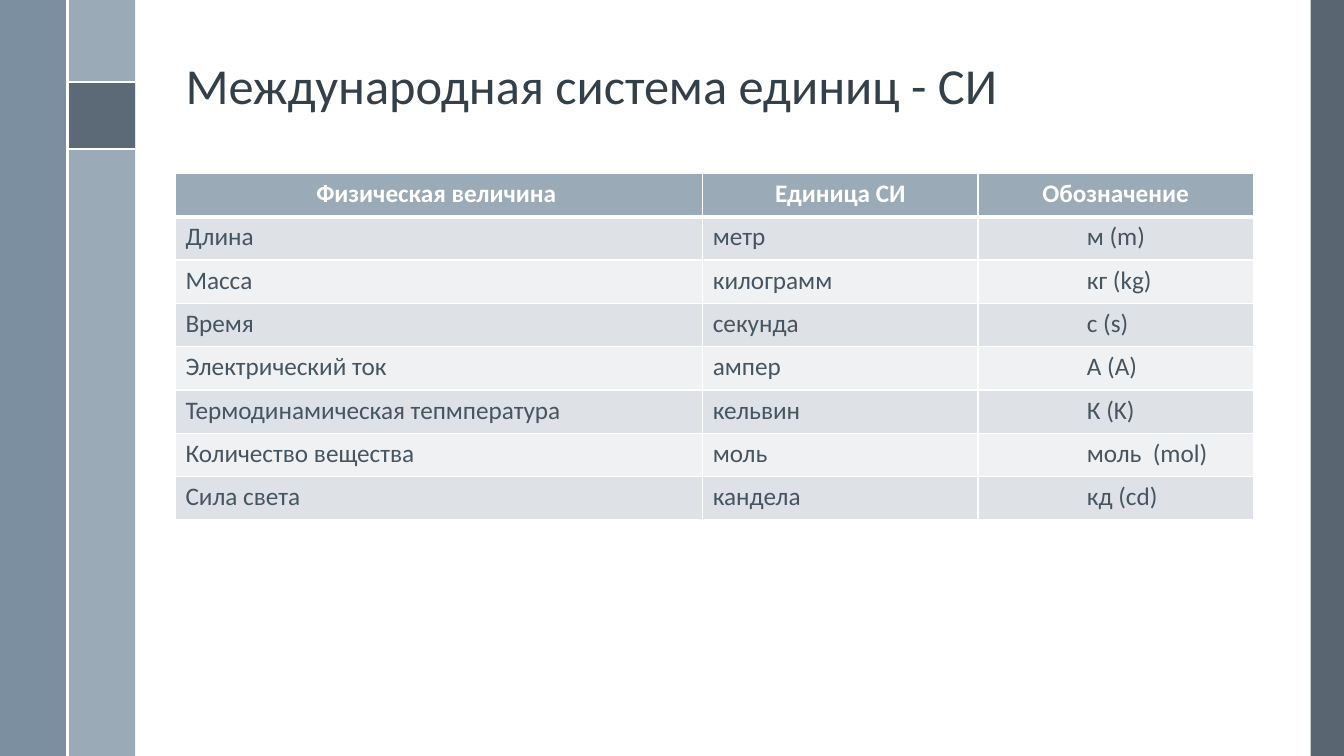
import pptx
import pptx.dml.color
import pptx.enum.shapes
import pptx.enum.text
import pptx.oxml
import pptx.oxml.ns
import pptx.util

TITLE = "Международная система единиц - СИ"
HEADER = ("Физическая величина ", "Единица СИ", "Обозначение")
UNITS = [
    ("Длина", "метр", "м (m)"),
    ("Масса", "килограмм", "кг (kg)"),
    ("Время", "секунда", "с (s)"),
    ("Электрический ток", "ампер", "А (A)"),
    ("Термодинамическая тепмпература", "кельвин", "К (K)"),
    ("Количество вещества", "моль", "моль  (mol)"),
    ("Сила света", "кандела", "кд (cd)"),
]
COLORS = {
    "white": "FFFFFF", "slate": "475562", "steel": "6A8093", "mist": "9BAAB7",
    "title": "344049", "text": "465562", "odd": "DEE1E5", "even": "EFF1F2",
}
FONT = "Calibri"

WIDTH, HEIGHT = 13.33, 7.5
BAND = 0.67
BADGE_TOP = 0.81
LEFT, CONTENT_WIDTH = 1.74, 10.7
COLUMNS = (5.23, 2.73, 2.73)
ROW = 0.43
TABLE_TOP = 1.72
CELL_MARGIN, SYMBOL_INDENT = 0.1, 0.98
THIN, THICK = 0.96, 3

# left, top, width, height, colour, opacity in percent
PANELS = [
    (13, 0, WIDTH - 13, HEIGHT, "slate", 90),
    (BAND, 0, BAND, HEIGHT, "mist", 100),
    (0, 0, BAND, HEIGHT, "steel", 88),
    (BAND, BADGE_TOP, BAND, BAND, "slate", 75),
]
RULES = [
    (BAND, BADGE_TOP, 2 * BAND, BADGE_TOP),
    (BAND, BADGE_TOP + BAND, 2 * BAND, BADGE_TOP + BAND),
    (BAND, 0, BAND, HEIGHT),
]
# Outline of the pi sign, in inches
PI_OUTLINE = [
    (1.18, 0.98), (0.9, 0.98), (0.86, 1), (0.83, 1.04), (0.84, 1.05),
    (0.85, 1.05), (0.87, 1.02), (0.9, 1.01), (0.94, 1.01), (0.93, 1.13),
    (0.91, 1.22), (0.88, 1.27), (0.88, 1.29), (0.9, 1.29), (0.93, 1.24),
    (0.96, 1.12), (0.97, 1.01), (1.06, 1.01), (1.04, 1.22), (1.05, 1.26),
    (1.07, 1.29), (1.1, 1.3), (1.12, 1.3), (1.16, 1.28), (1.19, 1.22),
    (1.18, 1.21), (1.16, 1.22), (1.14, 1.26), (1.11, 1.28), (1.08, 1.27),
    (1.07, 1.25), (1.07, 1.22), (1.09, 1.01), (1.18, 1.01), (1.19, 1),
]


def inches(*lengths):
    return [pptx.util.Inches(length) for length in lengths]


def rgb(name):
    return pptx.dml.color.RGBColor.from_string(COLORS[name])


def add_xml(parent, tag, **attributes):
    child = pptx.oxml.parse_xml(f"<a:{tag} {pptx.oxml.ns.nsdecls('a')}/>")
    for key, value in attributes.items():
        child.set(key, str(value))
    parent.append(child)
    return child


def paint(shape, color, opacity=100):
    shape.shadow.inherit = False
    shape.fill.solid()
    shape.fill.fore_color.rgb = rgb(color)
    shape.line.fill.background()
    if opacity < 100:
        tint = shape.fill._xPr.find(".//" + pptx.oxml.ns.qn("a:srgbClr"))
        add_xml(tint, "alpha", val=opacity * 1000)


def write(frame, text, align, **font):
    para = frame.paragraphs[0]
    para.alignment = align
    span = para.add_run()
    span.text = text
    span.font.color.rgb = rgb(font.pop("color"))
    for key, value in {"name": FONT, **font}.items():
        setattr(span.font, key, value)
    return para


def add_borders(cell, widths):
    """Draw white cell borders; they must stand before the fill in the XML."""
    properties = cell._tc.get_or_add_tcPr()
    for place, (side, width) in enumerate(widths.items()):
        line = add_xml(properties, "ln" + side, w=pptx.util.Pt(width))
        add_xml(add_xml(line, "solidFill"), "srgbClr", val=COLORS["white"])
        properties.insert(place, line)


def add_frame(page):
    shapes = page.shapes
    for *box, color, opacity in PANELS:
        panel = shapes.add_shape(pptx.enum.shapes.MSO_SHAPE.RECTANGLE, *inches(*box))
        paint(panel, color, opacity)
    for ends in RULES:
        rule = shapes.add_connector(pptx.enum.shapes.MSO_CONNECTOR.STRAIGHT, *inches(*ends))
        rule.line.color.rgb = rgb("white")
        rule.line.width = pptx.util.Pt(1.5)
        add_xml(rule._element.spPr, "effectLst")
    builder = shapes.build_freeform(*PI_OUTLINE[0], scale=pptx.util.Inches(1))
    builder.add_line_segments(PI_OUTLINE[1:], close=True)
    paint(builder.convert_to_shape(), "white")


def add_title(page):
    title = page.shapes.title
    title.left, title.top, title.width, title.height = inches(LEFT, 0.19, CONTENT_WIDTH, 1.36)
    frame = title.text_frame
    settings = {
        "word_wrap": True,
        "auto_size": pptx.enum.text.MSO_AUTO_SIZE.NONE,
        "vertical_anchor": pptx.enum.text.MSO_ANCHOR.MIDDLE,
    }
    for key, value in settings.items():
        setattr(frame, key, value)
    para = write(frame, TITLE, pptx.enum.text.PP_ALIGN.LEFT,
                 size=pptx.util.Pt(36), color="title")
    para.line_spacing = 0.9


def add_units_table(page):
    rows = [HEADER, *UNITS]
    box = inches(LEFT, TABLE_TOP, CONTENT_WIDTH, ROW * len(rows))
    table = page.shapes.add_table(len(rows), len(COLUMNS), *box).table
    for column, width in zip(table.columns, COLUMNS):
        column.width = pptx.util.Inches(width)
    for r, texts in enumerate(rows):
        table.rows[r].height = pptx.util.Inches(ROW)
        heading = r == 0
        fill = "mist" if heading else "odd" if r % 2 else "even"
        align = pptx.enum.text.PP_ALIGN.CENTER if heading else pptx.enum.text.PP_ALIGN.LEFT
        borders = {"L": THIN, "R": THIN, "T": THICK if r == 1 else THIN,
                   "B": THICK if heading else THIN}
        for c, text in enumerate(texts):
            cell = table.cell(r, c)
            cell.fill.solid()
            cell.fill.fore_color.rgb = rgb(fill)
            if c == 2 and not heading:
                cell.margin_left = pptx.util.Inches(CELL_MARGIN + SYMBOL_INDENT)
            write(cell.text_frame, text, align, size=pptx.util.Pt(18), bold=heading,
                  color="white" if heading else "text")
            add_borders(cell, borders)


def main():
    deck = pptx.Presentation()
    deck.slide_width, deck.slide_height = inches(WIDTH, HEIGHT)
    page = deck.slides.add_slide(deck.slide_layouts.get_by_name("Title Only"))
    add_frame(page)
    add_title(page)
    add_units_table(page)
    deck.save("out.pptx")


if __name__ == "__main__":
    main()
